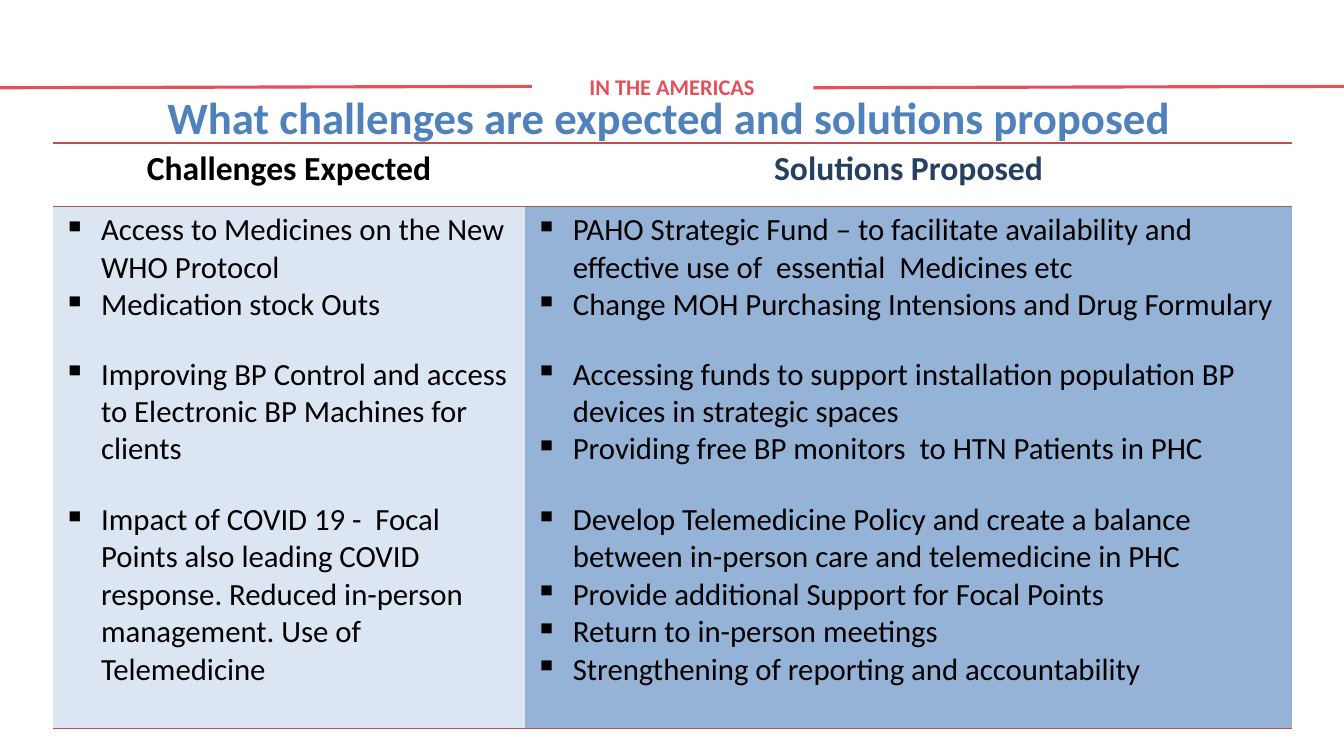
from lxml import etree
from pptx import Presentation
from pptx.dml.color import RGBColor
from pptx.enum.shapes import MSO_CONNECTOR
from pptx.enum.text import PP_ALIGN
from pptx.oxml.ns import qn
from pptx.util import Pt

CENTER = PP_ALIGN.CENTER
STRAIGHT = MSO_CONNECTOR.STRAIGHT
FONT = "Calibri"
BANNER_RED = "E3515B"
RULE_RED = "C0504D"
BLACK = "000000"
NO_STYLE = "{2D5ABB26-0587-4C30-8999-92F81FD0307C}"

HEADINGS = [("Challenges Expected", BLACK), ("Solutions Proposed", "254061")]
COLUMN_WIDTHS = [337, 548]
COLUMN_FILLS = ["DCE6F2", "95B3D7"]
ROW_HEIGHTS = [45.4, 103, 103.7, 166.3]
TOPICS = [
    (
        ["Access to Medicines on the New WHO Protocol", "Medication stock Outs"],
        ["PAHO Strategic Fund – to facilitate availability and effective use of  essential  Medicines etc",
         "Change MOH Purchasing Intensions and Drug Formulary"],
    ),
    (
        ["Improving BP Control and access to Electronic BP Machines for clients"],
        ["Accessing funds to support installation population BP devices in strategic spaces",
         "Providing free BP monitors  to HTN Patients in PHC"],
    ),
    (
        ["Impact of COVID 19 -  Focal Points also leading COVID response. "
         "Reduced in-person management. Use of Telemedicine"],
        ["Develop Telemedicine Policy and create a balance between in-person care and telemedicine in PHC",
         "Provide additional Support for Focal Points",
         "Return to in-person meetings",
         "Strengthening of reporting and accountability"],
    ),
]


def rgb(color):
    return RGBColor.from_string(color)


def style(paragraph, size, color, bold):
    font = paragraph.font
    font.name = FONT
    font.size = Pt(size)
    font.bold = bold
    font.color.rgb = rgb(color)


def add_label(slide, left, top, width, height, text, size, color):
    box = slide.shapes.add_textbox(Pt(left), Pt(top), Pt(width), Pt(height))
    box.text_frame.word_wrap = True
    label = box.text_frame.paragraphs[0]
    label.text = text
    label.alignment = CENTER
    style(label, size, color, True)
    return label


def add_title(slide, text):
    title = add_label(slide, 28, 57.6, 864, 44.6, text, 32, "4F81BD")
    title.line_spacing = 1.07
    title.space_after = Pt(8)
    title._p.get_or_add_pPr().set("marL", str(Pt(36)))


def add_banner_line(slide, start, end):
    line = slide.shapes.add_connector(STRAIGHT, Pt(start), Pt(62.7), Pt(end), Pt(61.7))
    line.line.color.rgb = rgb(BANNER_RED)
    line.line.width = Pt(2.25)
    etree.SubElement(line._element.spPr, qn("a:effectLst"))


def add_border(cell, side):
    properties = cell._tc.get_or_add_tcPr()
    border = etree.Element(qn(f"a:{side}"), w=str(Pt(1)))
    fill = etree.SubElement(border, qn("a:solidFill"))
    etree.SubElement(fill, qn("a:srgbClr"), val=RULE_RED)
    borders = [child for child in properties if child.tag.startswith(qn("a:ln"))]
    properties.insert(len(borders), border)


def fill_heading(cell, text, color):
    heading = cell.text_frame.paragraphs[0]
    heading.text = text
    heading.alignment = CENTER
    style(heading, 24, color, True)
    cell.fill.background()
    add_border(cell, "lnT")
    add_border(cell, "lnB")


def fill_bullets(cell, items, color):
    cell.text_frame.text = "\n".join(items)
    for item in cell.text_frame.paragraphs:
        properties = item._p.get_or_add_pPr()
        properties.set("marL", str(Pt(27)))
        properties.set("indent", str(-Pt(27)))
        etree.SubElement(properties, qn("a:buChar"), char="▪")
        style(item, 22, BLACK, False)
    cell.fill.solid()
    cell.fill.fore_color.rgb = rgb(color)


def add_topic_table(slide):
    frame = slide.shapes.add_table(
        len(ROW_HEIGHTS), len(COLUMN_WIDTHS), Pt(38), Pt(102.2),
        Pt(sum(COLUMN_WIDTHS)), Pt(sum(ROW_HEIGHTS)))
    table = frame.table
    table.first_row = False
    table.horz_banding = False
    table._tbl.tblPr.find(qn("a:tableStyleId")).text = NO_STYLE
    for column, width in zip(table.columns, COLUMN_WIDTHS):
        column.width = Pt(width)
    for row, height in zip(table.rows, ROW_HEIGHTS):
        row.height = Pt(height)
    for column, (text, color) in enumerate(HEADINGS):
        fill_heading(table.cell(0, column), text, color)
    for row, topic in enumerate(TOPICS, start=1):
        for column, items in enumerate(topic):
            fill_bullets(table.cell(row, column), items, COLUMN_FILLS[column])
    for column in range(len(COLUMN_WIDTHS)):
        add_border(table.cell(len(TOPICS), column), "lnB")


def main():
    deck = Presentation()
    deck.slide_width = Pt(960)
    deck.slide_height = Pt(540)
    slide = deck.slides.add_slide(deck.slide_layouts[6])
    add_banner_line(slide, 0, 380)
    add_label(slide, 380, 48.4, 200, 26.6, "IN THE AMERICAS", 16, BANNER_RED)
    add_banner_line(slide, 581, 961)
    add_topic_table(slide)
    add_title(slide, "What challenges are expected and solutions proposed")
    deck.save("out.pptx")


if __name__ == "__main__":
    main()
